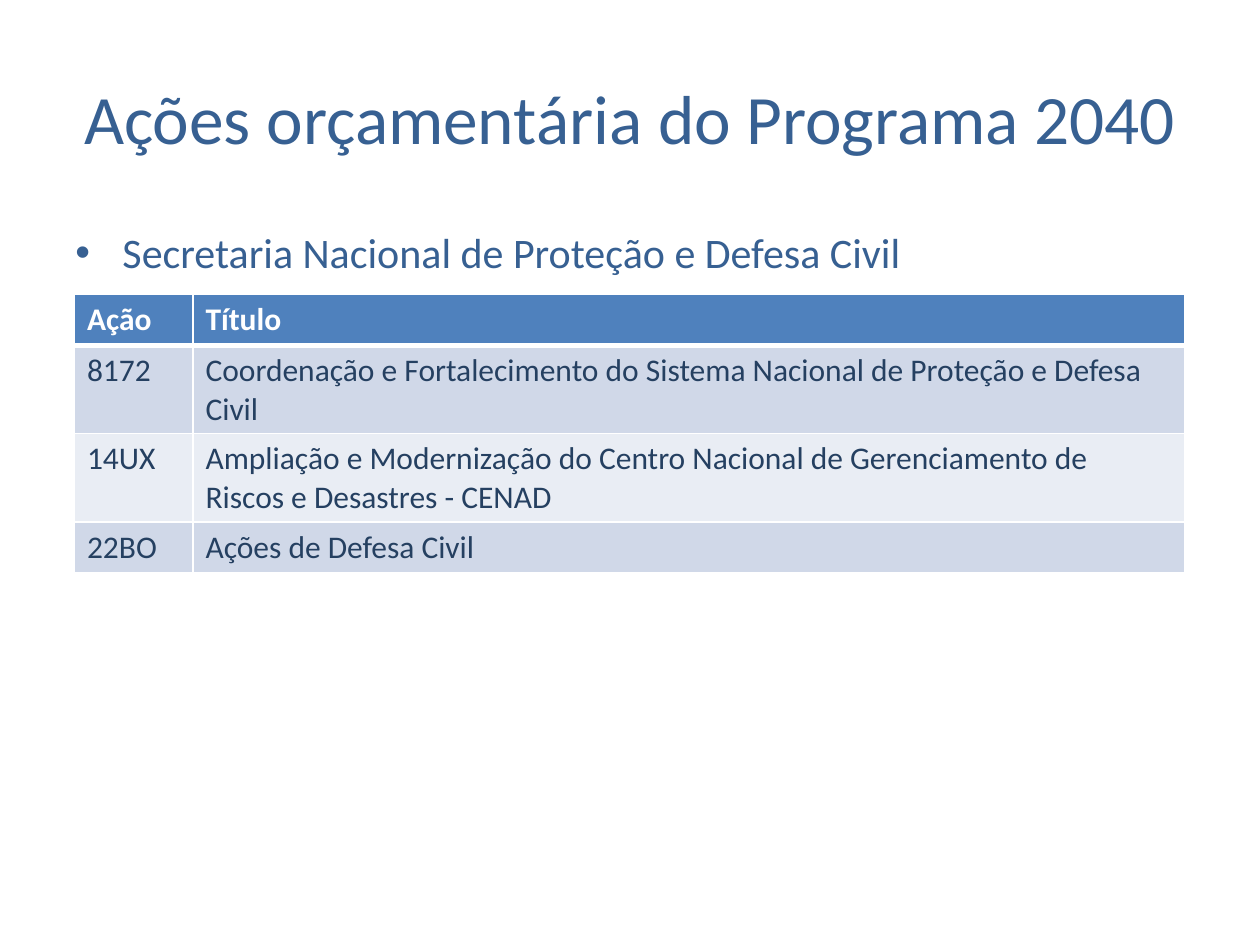
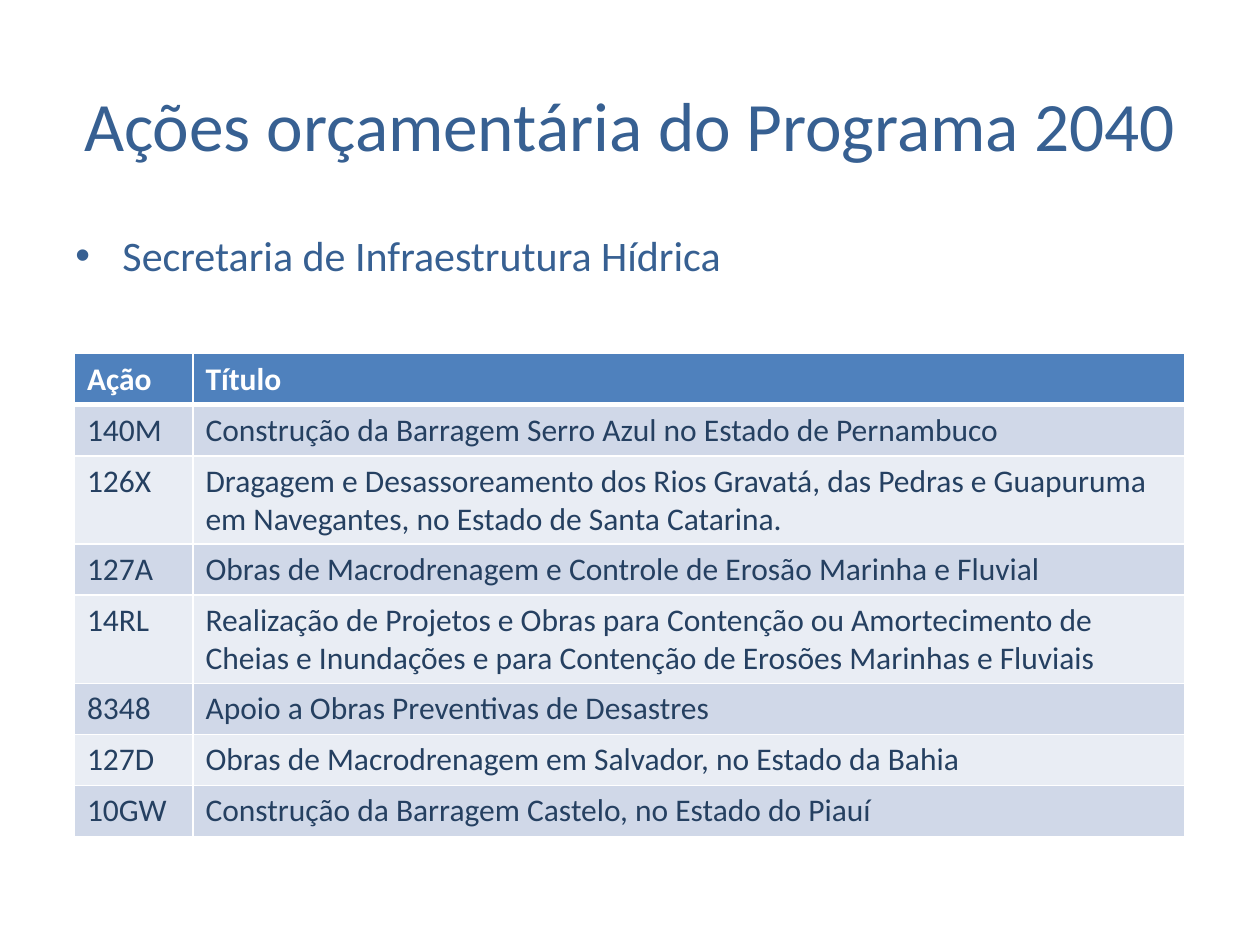
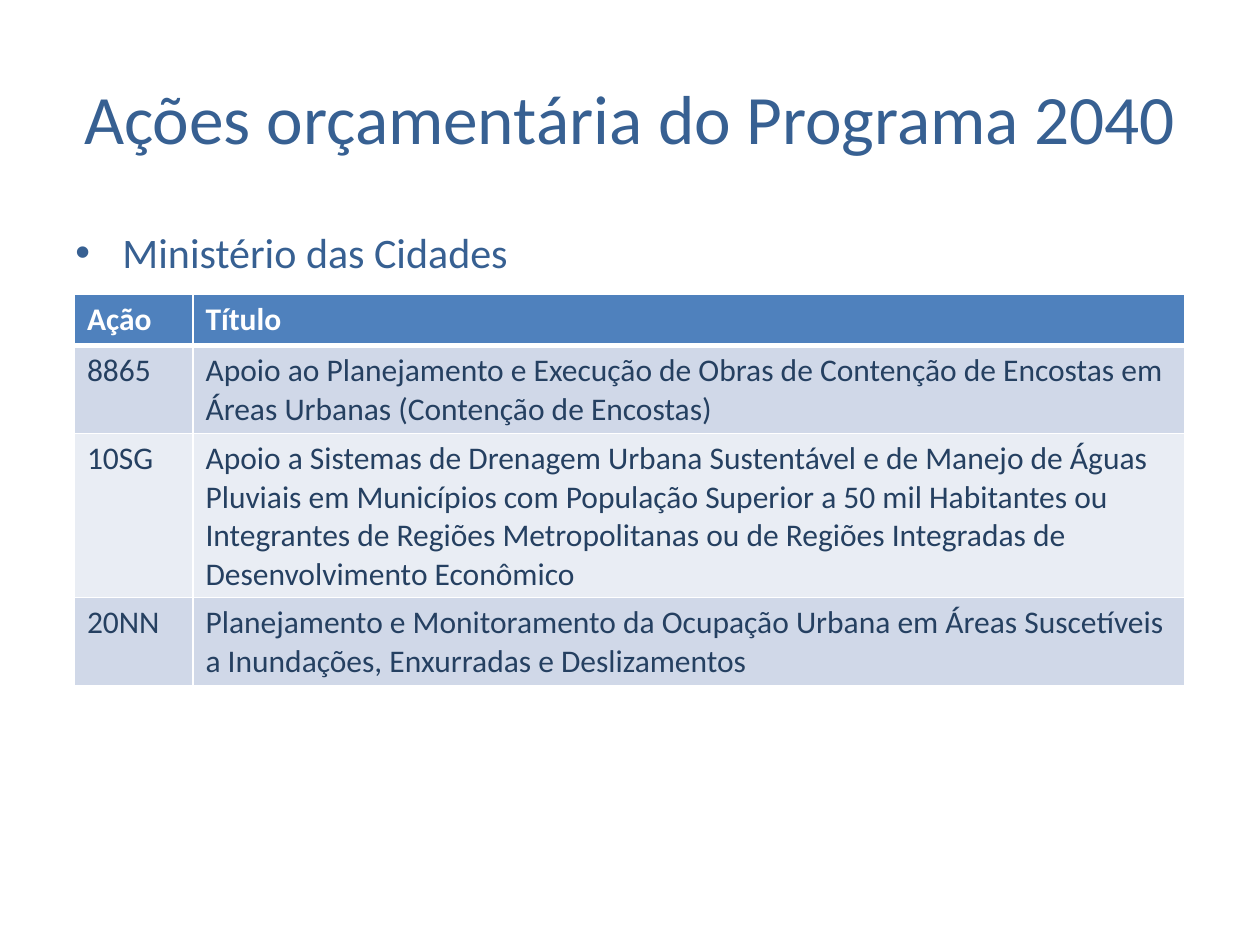
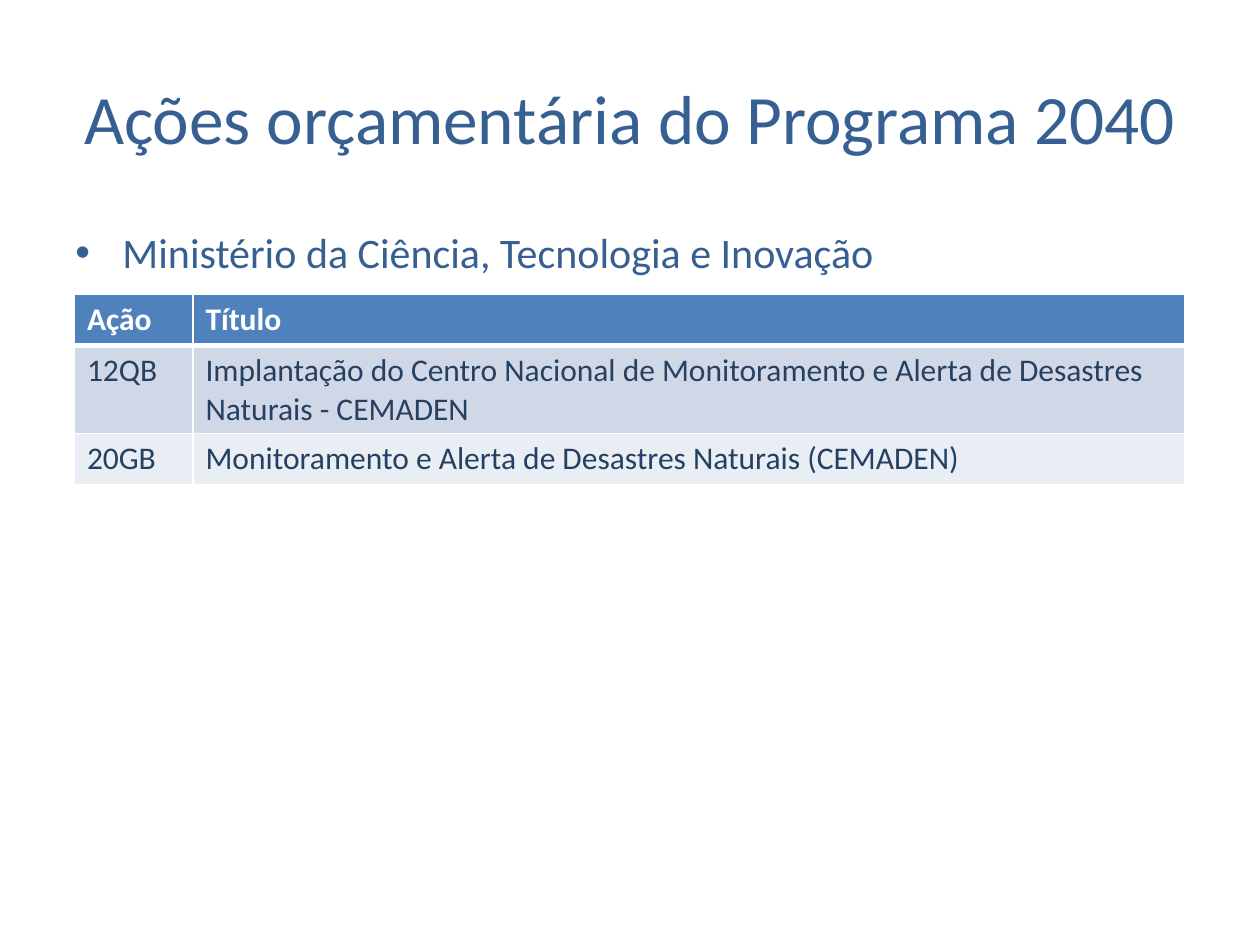
from dataclasses import dataclass

from lxml.etree import SubElement
from pptx import Presentation
from pptx.dml.color import RGBColor
from pptx.enum.text import MSO_ANCHOR, PP_ALIGN
from pptx.oxml.ns import qn
from pptx.util import Cm, Pt


@dataclass(frozen=True)
class Theme:
    font: str = "Calibri"
    title: str = "376092"
    ink: str = "254061"
    white: str = "FFFFFF"
    head: str = "4F81BD"
    bands: tuple = ("D0D8E8", "E9EDF4")
    title_size: float = 39.6
    body_size: float = 24
    cell_size: float = 18
    thin: float = 1
    thick: float = 3


THEME = Theme()
TITLE = "Ações orçamentária do Programa 2040"
HEADS = ("Ação", "Título")
LEFT, WIDTH = 1.27, 22.86
COLS = (2.39, 20.0)
ROW = 1.03

# office, title top, bullet top, table top, table height, actions
PAGES = [
    ("Secretaria Nacional de Proteção e Defesa Civil", 0.76, 4.45, 5.93, 5.61, [
        ("8172", "Coordenação e Fortalecimento do Sistema Nacional de "
                 "Proteção e Defesa Civil"),
        ("14UX", "Ampliação e Modernização do Centro Nacional de "
                 "Gerenciamento de Riscos e Desastres - CENAD"),
        ("22BO", "Ações de Defesa Civil"),
    ]),
    ("Secretaria de Infraestrutura Hídrica", 0.91, 4.51, 7.13, 9.73, [
        ("140M", "Construção da Barragem Serro Azul no Estado de Pernambuco"),
        ("126X", "Dragagem e Desassoreamento dos Rios Gravatá, das Pedras e "
                 "Guapuruma em Navegantes, no Estado de Santa Catarina."),
        ("127A", "Obras de Macrodrenagem e Controle de Erosão Marinha e Fluvial"),
        ("14RL", "Realização de Projetos e Obras para Contenção ou "
                 "Amortecimento de Cheias e Inundações e para Contenção de "
                 "Erosões Marinhas e Fluviais"),
        ("8348", "Apoio a Obras Preventivas de Desastres"),
        ("127D", "Obras de Macrodrenagem em Salvador, no Estado da Bahia"),
        ("10GW", "Construção da Barragem Castelo, no Estado do Piauí"),
    ]),
    ("Ministério das Cidades", 0.76, 4.45, 5.93, 7.9, [
        ("8865", "Apoio ao Planejamento e Execução de Obras de Contenção de "
                 "Encostas em Áreas Urbanas (Contenção de Encostas)"),
        ("10SG", "Apoio a Sistemas de Drenagem Urbana Sustentável e de Manejo "
                 "de Águas Pluviais em Municípios com População Superior a 50 "
                 "mil Habitantes ou Integrantes de Regiões Metropolitanas ou "
                 "de Regiões Integradas de Desenvolvimento Econômico"),
        ("20NN", "Planejamento e Monitoramento da Ocupação Urbana em Áreas "
                 "Suscetíveis a Inundações, Enxurradas e Deslizamentos"),
    ]),
    ("Ministério da Ciência, Tecnologia e Inovação", 0.76, 4.45, 5.93, 3.84, [
        ("12QB", "Implantação do Centro Nacional de Monitoramento e Alerta de "
                 "Desastres Naturais - CEMADEN"),
        ("20GB", "Monitoramento e Alerta de Desastres Naturais (CEMADEN)"),
    ]),
]


def style(para, size, color, bold=False):
    for run in para.runs:
        font = run.font
        font.name, font.size, font.bold = THEME.font, Pt(size), bold
        font.color.rgb = RGBColor.from_string(color)


def add_text(slide, text, top, height, size):
    """Add a full-width box with one styled paragraph and return its frame."""
    box = slide.shapes.add_textbox(Cm(LEFT), Cm(top), Cm(WIDTH), Cm(height))
    frame = box.text_frame
    frame.word_wrap = True
    frame.text = text
    style(frame.paragraphs[0], size, THEME.title)
    return frame


def add_title(slide, top):
    frame = add_text(slide, TITLE, top, 3.18, THEME.title_size)
    frame.vertical_anchor = MSO_ANCHOR.MIDDLE
    frame.paragraphs[0].alignment = PP_ALIGN.CENTER


def add_bullet(slide, text, top):
    frame = add_text(slide, text, top, 17.02 - top, THEME.body_size)
    props = frame.paragraphs[0]._p.get_or_add_pPr()
    props.set("marL", str(Cm(0.95)))
    props.set("indent", str(Cm(-0.95)))
    SubElement(props, qn("a:buFont"), typeface="Arial")
    SubElement(props, qn("a:buChar"), char="•")


def add_edges(cell, top, bottom):
    """Draw white borders; call before the fill, which must follow them."""
    props = cell._tc.get_or_add_tcPr()
    sides = {"L": THEME.thin, "R": THEME.thin, "T": top, "B": bottom}
    for side, width in sides.items():
        line = SubElement(props, qn(f"a:ln{side}"), w=str(Pt(width)))
        fill = SubElement(line, qn("a:solidFill"))
        SubElement(fill, qn("a:srgbClr"), val=THEME.white)


def fill_cell(cell, text, row):
    is_head = row == 0
    add_edges(cell, THEME.thick if row == 1 else THEME.thin,
              THEME.thick if is_head else THEME.thin)
    cell.fill.solid()
    tint = THEME.head if is_head else THEME.bands[(row - 1) % 2]
    cell.fill.fore_color.rgb = RGBColor.from_string(tint)
    cell.text = text
    style(cell.text_frame.paragraphs[0], THEME.cell_size,
          THEME.white if is_head else THEME.ink, is_head)


def add_grid(slide, actions, top, height):
    rows = [HEADS, *actions]
    shape = slide.shapes.add_table(len(rows), len(COLS), Cm(1.5), Cm(top),
                                   Cm(sum(COLS)), Cm(ROW * len(rows)))
    table = shape.table
    for col, width in zip(table.columns, COLS):
        col.width = Cm(width)
    for i, texts in enumerate(rows):
        table.rows[i].height = Cm(ROW)
        for j, text in enumerate(texts):
            fill_cell(table.cell(i, j), text, i)
    shape.height = Cm(height)


def main():
    deck = Presentation()
    deck.slide_width, deck.slide_height = Cm(25.4), Cm(19.05)
    for office, title_top, bullet_top, grid_top, height, actions in PAGES:
        slide = deck.slides.add_slide(deck.slide_layouts[6])
        add_title(slide, title_top)
        add_bullet(slide, office, bullet_top)
        add_grid(slide, actions, grid_top, height)
    deck.save("out.pptx")


if __name__ == "__main__":
    main()
